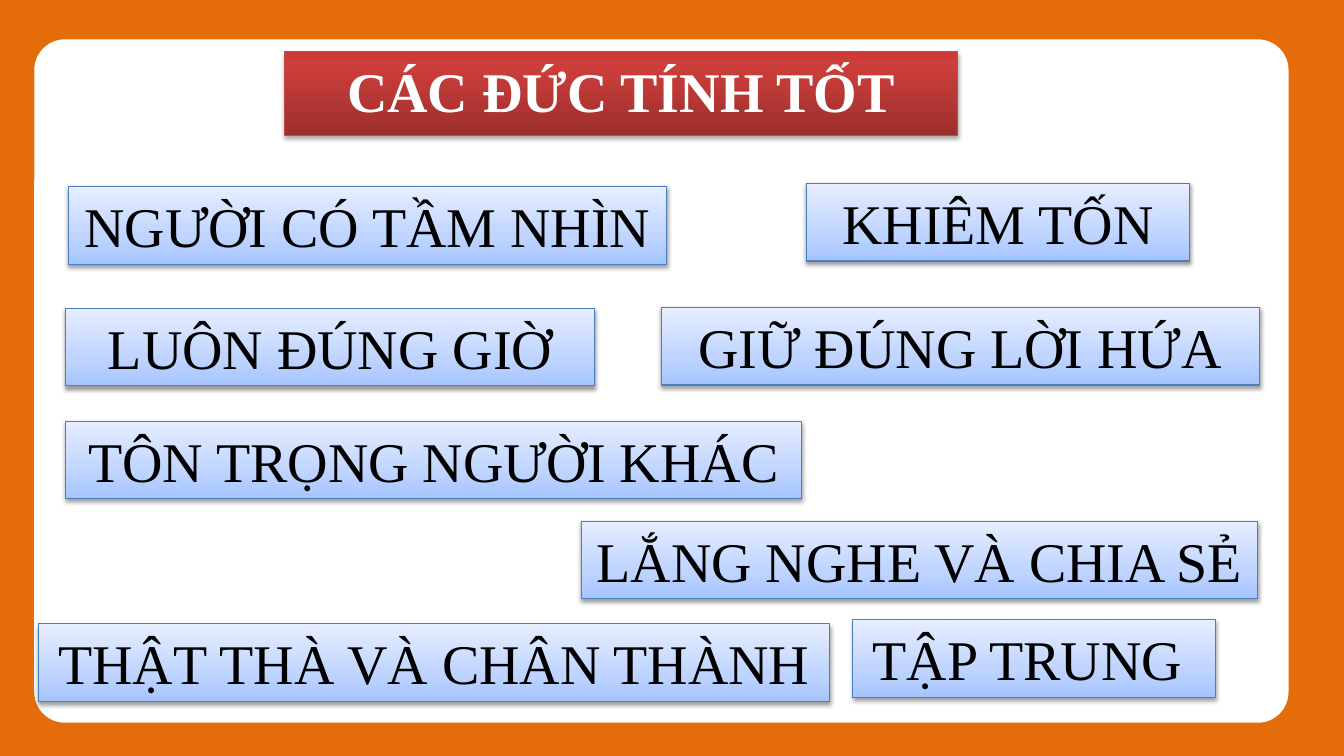
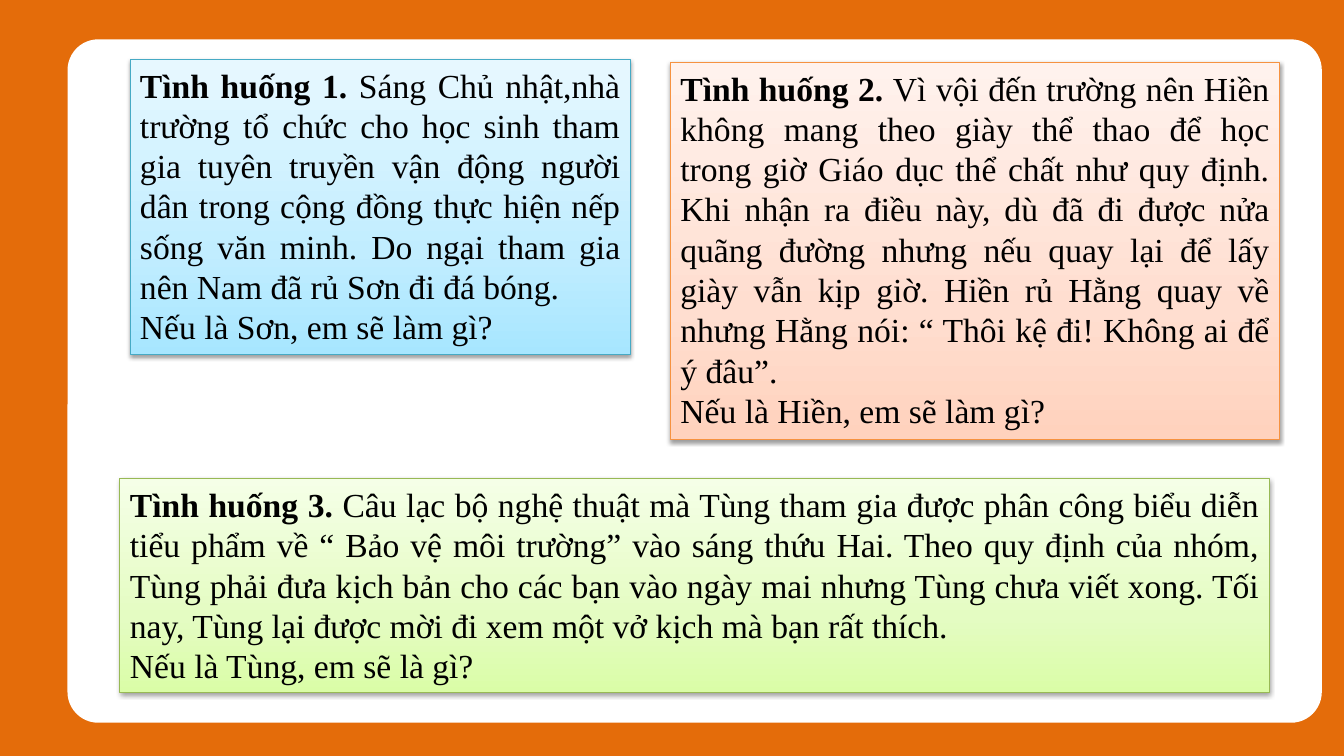
from copy import deepcopy
from typing import NamedTuple

from lxml import etree
from pptx import Presentation
from pptx.dml.color import RGBColor
from pptx.enum import shapes, text
from pptx.oxml.ns import qn
from pptx.util import Inches, Pt

FONT = "Times New Roman"
ORANGE = RGBColor(0xE4, 0x6C, 0x0A)
WHITE = RGBColor(0xFF, 0xFF, 0xFF)
BLACK = RGBColor(0x00, 0x00, 0x00)


class Style(NamedTuple):
    """Gradient stops from bottom to top, outline and shadow of a box."""
    stops: tuple
    outline: RGBColor
    shadow_opacity: int = 38
    shadow_offset: float = 1.6


def soft_style(bottom, middle, top, outline):
    """Return a pale gradient style from four hex colours."""
    colours = [RGBColor.from_string(c) for c in (bottom, middle, top)]
    return Style(tuple(zip((0, 0.35, 1), colours)), RGBColor.from_string(outline))


BLUE = soft_style("A4C4FF", "BFD4FF", "E6EEFF", "4B7EBC")
AQUA = soft_style("A7E6FF", "C1EDFF", "E7F8FF", "46AAC5")
PEACH = soft_style("FFD2BD", "FFDED0", "FFF2ED", "F69240")
GREEN = soft_style("DAFDA7", "E4FCC2", "F5FFE7", "98B955")
RED = Style(
    ((0, RGBColor(0x9C, 0x2F, 0x2D)), (0.8, RGBColor(0xCB, 0x3E, 0x3A)),
     (1, RGBColor(0xCE, 0x3B, 0x37))),
    RGBColor(0xBF, 0x4C, 0x48), 35, 1.8)

VIRTUE_HEIGHT = 0.77
VIRTUES = [
    ("NGƯỜI CÓ TẦM NHÌN", 0.68, 1.85, 5.93),
    ("KHIÊM TỐN", 8, 1.82, 3.8),
    ("LUÔN ĐÚNG GIỜ", 0.65, 3.06, 5.25),
    ("GIỮ ĐÚNG LỜI HỨA", 6.56, 3.05, 5.93),
    ("TÔN TRỌNG NGƯỜI KHÁC", 0.65, 4.18, 7.3),
    ("LẮNG NGHE VÀ CHIA SẺ", 5.77, 5.17, 6.7),
    ("THẬT THÀ VÀ CHÂN THÀNH", 0.38, 6.19, 7.85),
    ("TẬP TRUNG ", 8.46, 6.15, 3.6),
]

SITUATIONS = [
    ("Tình huống 1. ",
     "Sáng Chủ nhật,nhà trường tổ chức cho học sinh tham gia tuyên truyền "
     "vận động người dân trong cộng đồng thực hiện nếp sống văn minh. "
     "Do ngại tham gia nên Nam đã rủ Sơn đi đá bóng.",
     "Nếu là Sơn, em sẽ làm gì?", AQUA, (1.29, 0.59, 4.96, 2.93)),
    ("Tình huống 2. ",
     "Vì vội đến trường nên Hiền không mang theo giày thể thao để học trong "
     "giờ Giáo dục thể chất như quy định. Khi nhận ra điều này, dù đã đi được "
     "nửa quãng đường nhưng nếu quay lại để lấy giày vẫn kịp giờ. Hiền rủ Hằng "
     "quay về nhưng Hằng nói: “ Thôi kệ đi! Không ai để ý đâu”.",
     "Nếu là Hiền, em sẽ làm gì?", PEACH, (6.65, 0.62, 6.04, 3.74)),
    ("Tình huống 3. ",
     "Câu lạc bộ nghệ thuật mà Tùng tham gia được phân công biểu diễn tiểu "
     "phẩm về “ Bảo vệ môi trường” vào sáng thứu Hai. Theo quy định của nhóm, "
     "Tùng phải đưa kịch bản cho các bạn vào ngày mai nhưng Tùng chưa viết "
     "xong. Tối nay, Tùng lại được mời đi xem một vở kịch mà bạn rất thích.",
     "Nếu là Tùng, em sẽ là gì?", GREEN, (1.19, 4.75, 11.4, 2.12)),
]


def add_shadow(shape, opacity, offset):
    """Give a shape a soft black shadow that falls downwards."""
    shape.shadow.inherit = False
    effects = shape.element.spPr.find(qn("a:effectLst"))
    shadow = etree.SubElement(
        effects, qn("a:outerShdw"), blurRad=str(Pt(3.1)), dist=str(Pt(offset)),
        dir="5400000", rotWithShape="0")
    colour = etree.SubElement(shadow, qn("a:srgbClr"), val=str(BLACK))
    etree.SubElement(colour, qn("a:alpha"), val=str(opacity * 1000))


def style_box(shape, style):
    """Apply gradient, outline, shadow and text frame settings to a box."""
    shape.fill.gradient()
    shape.fill.gradient_angle = 90
    stop_list = shape.element.spPr.find(".//" + qn("a:gsLst"))
    stop_list.append(deepcopy(stop_list[-1]))
    for stop, (position, colour) in zip(shape.fill.gradient_stops, style.stops):
        stop.position = position
        stop.color.rgb = colour
    shape.line.color.rgb = style.outline
    shape.line.width = Pt(0.75)
    add_shadow(shape, style.shadow_opacity, style.shadow_offset)
    frame = shape.text_frame
    frame.word_wrap = True
    frame.auto_size = text.MSO_AUTO_SIZE.SHAPE_TO_FIT_TEXT
    frame.vertical_anchor = text.MSO_ANCHOR.TOP


def add_box(page, box, style):
    """Add a styled rectangle and return its text frame."""
    shape = page.shapes.add_shape(shapes.MSO_SHAPE.RECTANGLE, *map(Inches, box))
    style_box(shape, style)
    return shape.text_frame


def format_para(para, size, colour=BLACK, align=text.PP_ALIGN.CENTER, bold=False):
    """Set alignment and font of a paragraph."""
    para.alignment = align
    para.font.name = FONT
    para.font.size = Pt(size)
    para.font.bold = bold
    para.font.color.rgb = colour


def add_panel(page, left):
    """Add the white rounded panel behind everything else."""
    panel = page.shapes.add_shape(
        shapes.MSO_SHAPE.ROUNDED_RECTANGLE,
        *map(Inches, (left, 0.39, 12.44, 6.78)))
    panel.adjustments[0] = 0.045
    panel.fill.solid()
    panel.fill.fore_color.rgb = WHITE
    panel.line.fill.background()
    panel.shadow.inherit = False
    panel.element.getparent().insert(2, panel.element)


def place_title(page, words, box):
    """Turn the title placeholder into a red banner."""
    title = page.shapes.title
    title.left, title.top, title.width, title.height = map(Inches, box)
    title.text_frame.text = words
    style_box(title, RED)
    format_para(title.text_frame.paragraphs[0], 40, WHITE, bold=True)


def add_situation(page, heading, story, question, style, box):
    """Add a situation with a bold heading and a closing question."""
    frame = add_box(page, box, style)
    para = frame.paragraphs[0]
    span = para.add_run()
    span.text = heading
    span.font.bold = True
    para.add_run().text = story
    frame.add_paragraph().text = question
    for para in frame.paragraphs:
        format_para(para, 24, align=text.PP_ALIGN.JUSTIFY)


def build_virtues(deck):
    """Build the slide of good virtues."""
    page = deck.slides.add_slide(deck.slide_layouts.get_by_name("Title Only"))
    add_panel(page, 0.34)
    place_title(page, "CÁC ĐỨC TÍNH TỐT", (2.82, 0.51, 6.68, VIRTUE_HEIGHT))
    for words, left, top, width in VIRTUES:
        frame = add_box(page, (left, top, width, VIRTUE_HEIGHT), BLUE)
        frame.text = words
        format_para(frame.paragraphs[0], 40)


def build_situations(deck):
    """Build the slide of situations to discuss."""
    page = deck.slides.add_slide(deck.slide_layouts.get_by_name("Blank"))
    add_panel(page, 0.67)
    for situation in SITUATIONS:
        add_situation(page, *situation)


def main():
    """Build and save the deck."""
    deck = Presentation()
    deck.slide_width, deck.slide_height = Inches(13.33), Inches(7.5)
    backdrop = deck.slide_master.background.fill
    backdrop.solid()
    backdrop.fore_color.rgb = ORANGE
    build_virtues(deck)
    build_situations(deck)
    deck.save("out.pptx")


if __name__ == "__main__":
    main()
